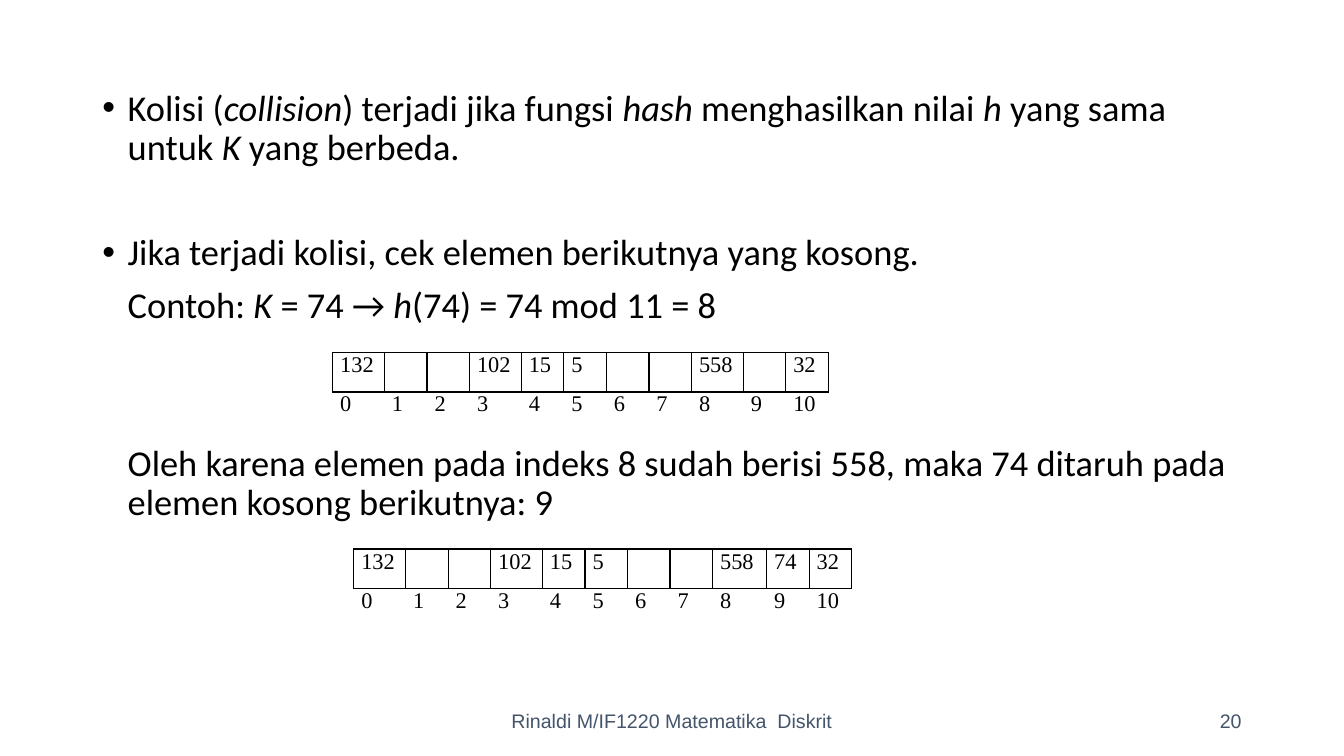
from dataclasses import dataclass

from lxml import etree
from pptx import Presentation
from pptx.dml.color import RGBColor
from pptx.enum import text as t
from pptx.oxml import ns
from pptx.util import Pt


@dataclass(frozen=True)
class Theme:
    ink: RGBColor = RGBColor(0, 0, 0)
    muted: RGBColor = RGBColor(0x44, 0x54, 0x6A)
    body_font: str = "Calibri"
    table_font: str = "Times New Roman"
    footer_font: str = "Arial"
    body_size: float = 26
    table_size: float = 16
    footer_size: float = 14


THEME = Theme()

# Each paragraph: bulleted, space before, runs of (text, italic)
BODY = [
    (True, 0, [("Kolisi (", False), ("collision", True),
               (") terjadi jika fungsi ", False), ("hash ", True),
               ("menghasilkan nilai ", False), ("h", True),
               (" yang sama untuk ", False), ("K", True),
               (" yang berbeda.", False)]),
    (True, 47, [("Jika terjadi kolisi, cek elemen berikutnya yang kosong.", False)]),
    (False, 10, [("Contoh: ", False), ("K", True), (" = 74 → ", False),
                 ("h", True), ("(74) = 74 mod 11 = 8", False)]),
    (False, 84.5, [("Oleh karena elemen pada indeks 8 sudah berisi 558, maka 74 "
                    "ditaruh pada elemen kosong berikutnya: 9", False)]),
]
BEFORE = ["132", "", "", "102", "15", "5", "", "", "558", "", "32"]
AFTER = BEFORE[:9] + ["74"] + BEFORE[10:]


def add_run(p, text, font, size, color, italic=False):
    r = p.add_run()
    r.text = text
    r.font.name = font
    r.font.size = Pt(size)
    r.font.color.rgb = color
    r.font.italic = italic


def set_bullet(p, bulleted, hang=18):
    """Give the paragraph a hanging bullet, or the same left edge without one."""
    pPr = p._p.get_or_add_pPr()
    pPr.set("marL", str(Pt(hang)))
    pPr.set("indent", str(Pt(-hang if bulleted else 0)))
    if bulleted:
        etree.SubElement(pPr, ns.qn("a:buFont"), typeface="Arial")
        etree.SubElement(pPr, ns.qn("a:buChar"), char="•")
    else:
        etree.SubElement(pPr, ns.qn("a:buNone"))


def fill_body(sp, left, top, width, height):
    sp.left, sp.top, sp.width, sp.height = map(Pt, (left, top, width, height))
    tf = sp.text_frame
    tf.word_wrap = True
    tf.auto_size = t.MSO_AUTO_SIZE.NONE
    tf.vertical_anchor = t.MSO_ANCHOR.TOP
    for i, (bulleted, before, runs) in enumerate(BODY):
        p = tf.add_paragraph() if i else tf.paragraphs[0]
        set_bullet(p, bulleted)
        p.alignment = t.PP_ALIGN.LEFT
        p.line_spacing = 0.9
        p.space_before = Pt(before)
        for text, italic in runs:
            add_run(p, text, THEME.body_font, THEME.body_size, THEME.ink, italic)


def set_borders(cell, visible):
    """Draw the named sides (of L, R, T, B) and hide the others."""
    tcPr = cell._tc.get_or_add_tcPr()
    for side in "LRTB":
        ln = etree.SubElement(tcPr, ns.qn(f"a:ln{side}"), w=str(Pt(1)))
        if side in visible:
            fill = etree.SubElement(ln, ns.qn("a:solidFill"))
            etree.SubElement(fill, ns.qn("a:srgbClr"), val=str(THEME.ink))
        else:
            etree.SubElement(ln, ns.qn("a:noFill"))


def add_hash_table(s, left, top, values, widths, inset, row_height=28):
    """Boxed values above their unboxed indices."""
    rows = [values, [str(i) for i in range(len(values))]]
    table = s.shapes.add_table(2, len(values), Pt(left), Pt(top),
                               Pt(sum(widths)), Pt(2 * row_height)).table
    table.first_row = table.horz_banding = False
    for column, width in zip(table.columns, widths):
        column.width = Pt(width)
    for i, row in enumerate(rows):
        for j, value in enumerate(row):
            cell = table.cell(i, j)
            set_borders(cell, "T" if i else "LRTB")
            cell.fill.background()
            cell.margin_left = cell.margin_right = Pt(inset)
            cell.margin_top = cell.margin_bottom = 0
            if value:
                p = cell.text_frame.paragraphs[0]
                p.alignment = t.PP_ALIGN.JUSTIFY
                p.space_before = p.space_after = Pt(3)
                add_run(p, value, THEME.table_font, THEME.table_size, THEME.ink)


def add_footer(s, left, width, text, align, top=500.4, height=28.8):
    tf = s.shapes.add_textbox(Pt(left), Pt(top), Pt(width), Pt(height)).text_frame
    tf.word_wrap = True
    tf.vertical_anchor = t.MSO_ANCHOR.MIDDLE
    p = tf.paragraphs[0]
    p.alignment = align
    add_run(p, text, THEME.footer_font, THEME.footer_size, THEME.muted)


def column_widths(values, wide):
    """Three-digit values take wider columns; wide is the width for 558."""
    return [wide if v == "558" else 37 if len(v) == 3 else 30.4 for v in values]


def build_collision_slide(prs):
    s = prs.slides.add_slide(prs.slide_layouts[1])
    title = s.shapes.title
    title.element.getparent().remove(title.element)
    add_footer(s, 318, 324, "Rinaldi M/IF1220 Matematika  Diskrit", t.PP_ALIGN.CENTER)
    add_footer(s, 678, 216, "20", t.PP_ALIGN.RIGHT)
    fill_body(s.placeholders[1], 66, 60.5, 820, 440)
    add_hash_table(s, 237.6, 252, BEFORE, column_widths(BEFORE, 37), 5.4)
    add_hash_table(s, 252.7, 392.2, AFTER, column_widths(AFTER, 38.6), 5.4)


def main():
    prs = Presentation()
    prs.slide_width, prs.slide_height = Pt(960), Pt(540)
    build_collision_slide(prs)
    prs.save("out.pptx")


if __name__ == "__main__":
    main()
